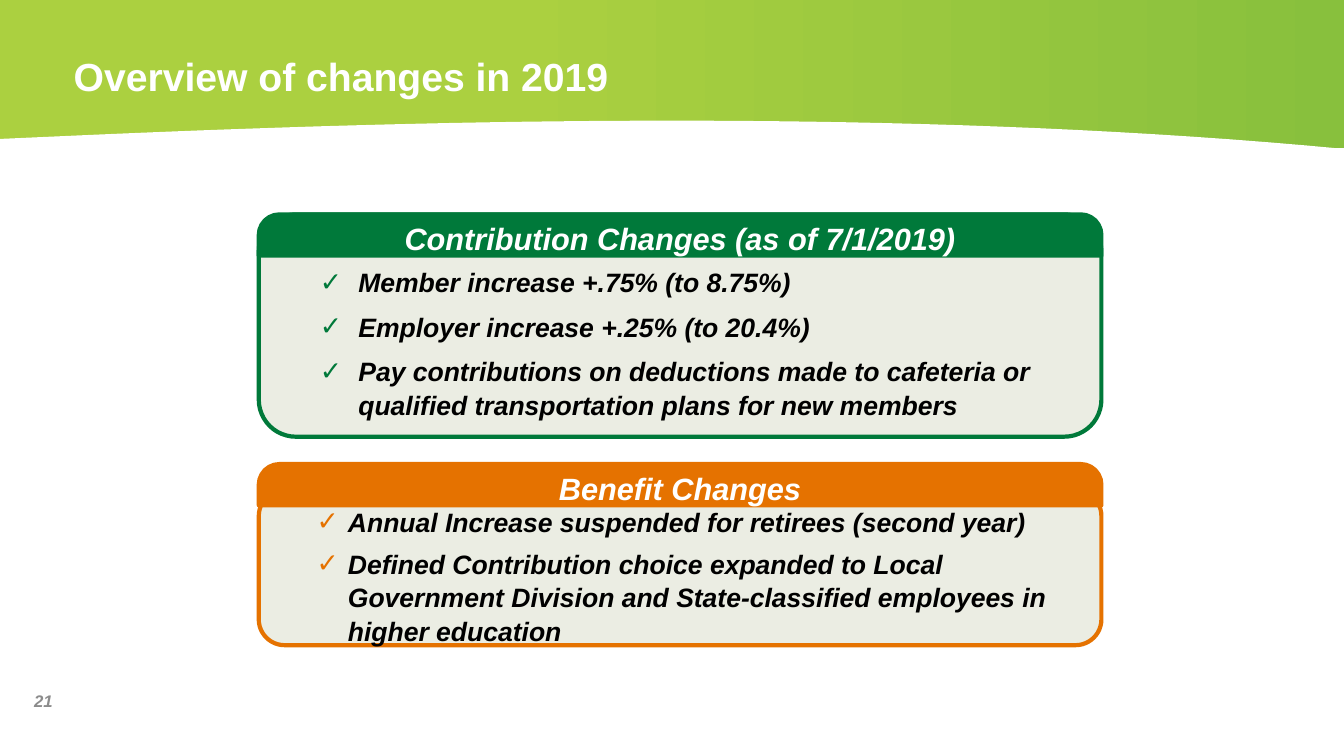
from lxml.etree import SubElement
from pptx import Presentation
from pptx.dml.color import RGBColor
from pptx.enum.shapes import MSO_SHAPE
from pptx.enum.text import MSO_ANCHOR, MSO_AUTO_SIZE, PP_ALIGN
from pptx.oxml.ns import qn
from pptx.util import Cm, Pt

WHITE, BLACK, GREY, CREAM = "FFFFFF", "000000", "8C8C8C", "EBEDE3"
GREEN, ORANGE = "00793A", "E57200"


def color(hex_code):
    return RGBColor.from_string(hex_code)


def bezier(start, control_1, control_2, end, steps=40):
    """Points along a cubic curve, both ends included."""
    points = []
    for step in range(steps + 1):
        t = step / steps
        weights = ((1 - t) ** 3, 3 * t * (1 - t) ** 2, 3 * t ** 2 * (1 - t), t ** 3)
        corners = (start, control_1, control_2, end)
        points.append(tuple(Cm(sum(w * c[axis] for w, c in zip(weights, corners)))
                            for axis in (0, 1)))
    return points


class ChangesSlide:
    font_name = "Arial"
    card_left, card_width, heading_height = 6.53, 21.26, 1.04

    def __init__(self, presentation):
        self.slide = presentation.slides.add_slide(presentation.slide_layouts[3])
        self.shapes = self.slide.shapes

    def style(self, paragraph, size, hex_code, italic=True, align=PP_ALIGN.LEFT):
        paragraph.alignment = align
        font = paragraph.font
        font.name, font.size = self.font_name, Pt(size)
        font.bold, font.italic = True, italic
        font.color.rgb = color(hex_code)

    def paint(self, shape, fill, line=None):
        shape.shadow.inherit = False
        shape.fill.solid()
        shape.fill.fore_color.rgb = color(fill)
        if line:
            shape.line.color.rgb = color(line)
            shape.line.width = Pt(3)
        else:
            shape.line.fill.background()

    def place(self, placeholder, left, top, width, height):
        """Move a placeholder and bring it in front of what is drawn so far."""
        placeholder.left, placeholder.top = Cm(left), Cm(top)
        placeholder.width, placeholder.height = Cm(width), Cm(height)
        placeholder.text_frame.auto_size = MSO_AUTO_SIZE.NONE
        self.shapes._spTree.append(placeholder._element)

    def banner(self):
        band = self.shapes.add_shape(MSO_SHAPE.RECTANGLE, Cm(-0.08), 0, Cm(33.99), Cm(3.73))
        band.shadow.inherit = False
        band.line.fill.background()
        band.fill.gradient()
        band.fill.gradient_angle = 0
        stops = ((0.38, "ABD040"), (1, "88C03D"))
        for stop, (position, hex_code) in zip(band.fill.gradient_stops, stops):
            stop.position = position
            stop.color.rgb = color(hex_code)

        edge = bezier((-0.08, 3.51), (7.19, 3.18), (21.16, 2.54), (33.93, 3.76))
        builder = self.shapes.build_freeform(*edge[0])
        builder.add_line_segments(edge[1:] + [(Cm(33.93), Cm(5.74)), (0, Cm(5.74))], close=True)
        self.paint(builder.convert_to_shape(), WHITE)

    def title(self, text):
        title = self.shapes.title
        self.place(title, 1.3, 0.53, 28.37, 2.79)
        frame = title.text_frame
        frame.text = text
        frame.vertical_anchor = MSO_ANCHOR.MIDDLE
        frame.margin_left = Cm(0.56)
        self.style(frame.paragraphs[0], 28, WHITE, italic=False)

    def check_list(self, body, items, accent, indent, hanging, gap):
        frame = body.text_frame
        frame.margin_left = frame.margin_right = 0
        frame.margin_top, frame.margin_bottom = Cm(0.51), Cm(0.13)
        for number, item in enumerate(items):
            paragraph = frame.add_paragraph() if number else frame.paragraphs[0]
            paragraph.text = item
            paragraph.space_before = Pt(gap if number else 0)
            paragraph.line_spacing = 1.05
            properties = paragraph._p.get_or_add_pPr()
            properties.set("marL", str(Cm(indent)))
            properties.set("indent", str(Cm(-hanging)))
            bullet_color = SubElement(properties, qn("a:buClr"))
            SubElement(bullet_color, qn("a:srgbClr"), val=accent)
            SubElement(properties, qn("a:buChar"), char="✓")
            self.style(paragraph, 19, BLACK)

    def card(self, index, heading, items, accent, heading_top, top, height,
             anchor, indent, hanging, gap):
        body = self.slide.placeholders[index]
        self.place(body, self.card_left, top, self.card_width, height)
        geometry = SubElement(body._element.spPr, qn("a:prstGeom"), prst="roundRect")
        SubElement(geometry, qn("a:avLst"))
        self.paint(body, CREAM, accent)
        body.text_frame.vertical_anchor = anchor
        self.check_list(body, items, accent, indent, hanging, gap)

        header = self.shapes.add_shape(
            MSO_SHAPE.ROUND_2_SAME_RECTANGLE, Cm(self.card_left), Cm(heading_top),
            Cm(self.card_width), Cm(self.heading_height))
        header.adjustments[0] = 0.5
        self.paint(header, accent, accent)
        header.text_frame.text = heading
        header.text_frame.vertical_anchor = MSO_ANCHOR.MIDDLE
        self.style(header.text_frame.paragraphs[0], 22, WHITE, align=PP_ALIGN.CENTER)

    def page_number(self, number):
        box = self.shapes.add_textbox(Cm(0.46), Cm(17.17), Cm(1.12), Cm(1.02))
        frame = box.text_frame
        frame.word_wrap = True
        frame.vertical_anchor = MSO_ANCHOR.MIDDLE
        frame.text = number
        self.style(frame.paragraphs[0], 12, GREY, align=PP_ALIGN.RIGHT)


def main():
    presentation = Presentation()
    presentation.slide_width, presentation.slide_height = Cm(33.91), Cm(19.05)
    changes = ChangesSlide(presentation)

    # Banner and title
    changes.banner()
    changes.title("Overview of changes in 2019")

    # Contribution changes
    changes.card(
        1, "Contribution Changes (as of 7/1/2019)",
        ["Member increase +.75% (to 8.75%)",
         "Employer increase +.25% (to 20.4%)",
         "Pay contributions on deductions made to cafeteria or qualified "
         "transportation plans for new members"],
        GREEN, heading_top=5.41, top=5.41, height=5.61,
        anchor=MSO_ANCHOR.BOTTOM, indent=2.24, hanging=0.97, gap=8)

    # Benefit changes
    changes.card(
        2, "Benefit Changes",
        ["Annual Increase suspended for retirees (second year)",
         "Defined Contribution choice expanded to Local Government Division "
         "and State-classified employees in higher education"],
        ORANGE, heading_top=11.71, top=12.37, height=3.91,
        anchor=MSO_ANCHOR.MIDDLE, indent=2.06, hanging=0.79, gap=6)

    # Page number
    changes.page_number("21")

    presentation.save("out.pptx")


if __name__ == "__main__":
    main()
